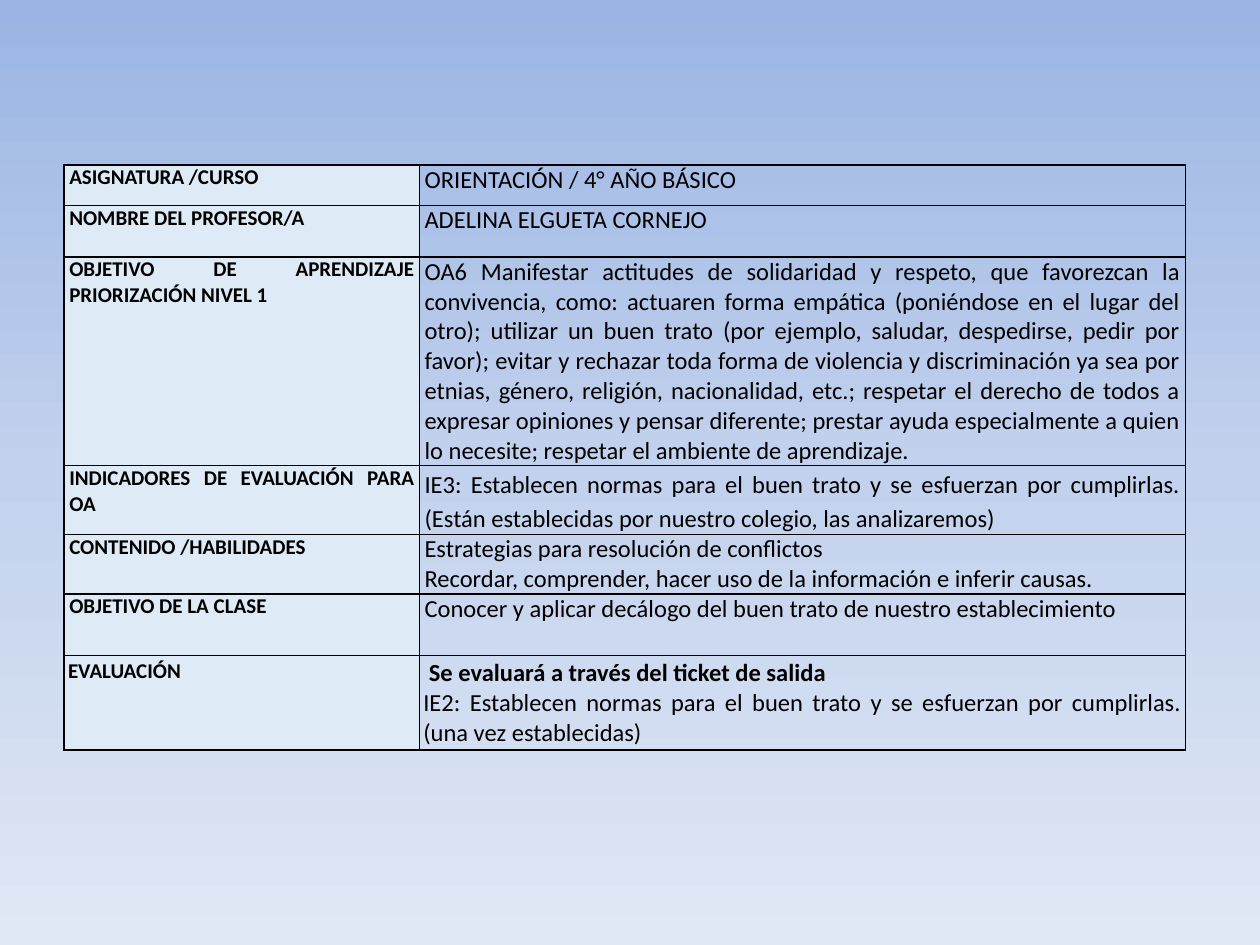
"""Build a lesson plan slide: one table of subject, objectives and evaluation."""
from copy import deepcopy

from pptx import Presentation
from pptx.dml.color import RGBColor
from pptx.enum.text import PP_ALIGN
from pptx.oxml import parse_xml
from pptx.oxml.ns import nsdecls, qn
from pptx.util import Inches, Pt

JUSTIFY = PP_ALIGN.JUSTIFY
BLANK_LAYOUT = 6
LABEL_FILL = "DEEAF6"
BACKGROUND = [(0, "9AB5E4"), (0.5, "C2D1ED"), (1, "E1E8F5")]
COLUMN_WIDTHS = [2.82, 6.08]
ROWS = [
    (0.32, "ASIGNATURA /CURSO", ["ORIENTACIÓN / 4° AÑO BÁSICO"]),
    (0.41, "NOMBRE DEL PROFESOR/A", ["ADELINA ELGUETA CORNEJO"]),
    (0.69, "OBJETIVO DE APRENDIZAJE PRIORIZACIÓN NIVEL 1", [
        "OA6 Manifestar actitudes de solidaridad y respeto, que favorezcan la "
        "convivencia, como: actuaren forma empática (poniéndose en el lugar del "
        "otro); utilizar un buen trato (por ejemplo, saludar, despedirse, pedir por "
        "favor); evitar y rechazar toda forma de violencia y discriminación ya sea "
        "por etnias, género, religión, nacionalidad, etc.; respetar el derecho de "
        "todos a expresar opiniones y pensar diferente; prestar ayuda especialmente "
        "a quien lo necesite; respetar el ambiente de aprendizaje."]),
    (0.48, "INDICADORES DE EVALUACIÓN PARA OA", [
        "IE3: Establecen normas para el buen trato y se esfuerzan por cumplirlas. "
        "(Están establecidas por nuestro colegio, las analizaremos)"]),
    (0.32, "CONTENIDO /HABILIDADES", [
        "Estrategias para resolución de conflictos",
        "Recordar, comprender, hacer uso de la información e inferir causas."]),
    (0.49, "OBJETIVO DE LA CLASE", [
        "Conocer y aplicar decálogo del buen trato de nuestro establecimiento"]),
    (0.63, "EVALUACIÓN", [
        " Se evaluará a través del ticket de salida",
        "IE2: Establecen normas para el buen trato y se esfuerzan por cumplirlas. "
        "(una vez establecidas)"]),
]


def color(value):
    """Turn a hex string into a colour."""
    return RGBColor.from_string(value)


def write_cell(cell, lines, size, bold, side, edge):
    """Fill a cell with justified paragraphs, margins and black borders."""
    cell.margin_left = cell.margin_right = Inches(side)
    cell.margin_top = cell.margin_bottom = Inches(edge)
    frame = cell.text_frame
    for index, line in enumerate(lines):
        para = frame.paragraphs[0] if index == 0 else frame.add_paragraph()
        para.alignment = JUSTIFY
        span = para.add_run()
        span.text = line
        span.font.name = "Calibri"
        span.font.size = Pt(size)
        span.font.bold = bold
        span.font.color.rgb = color("000000")
    properties = cell._tc.get_or_add_tcPr()
    for position, name in enumerate(["lnL", "lnR", "lnT", "lnB"]):
        properties.insert(position, parse_xml(
            f'<a:{name} {nsdecls("a")} w="{Pt(1)}"><a:solidFill>'
            f'<a:srgbClr val="000000"/></a:solidFill></a:{name}>'))


deck = Presentation()
deck.slide_width = Inches(10)
deck.slide_height = Inches(7.5)
page = deck.slides.add_slide(deck.slide_layouts[BLANK_LAYOUT])

backdrop = page.background.fill
backdrop.gradient()
backdrop.gradient_angle = 270
stop_list = page._element.find(".//" + qn("a:gsLst"))
stop_list.append(deepcopy(stop_list[-1]))
for stop, (place, shade) in zip(backdrop.gradient_stops, BACKGROUND):
    stop.position = place
    stop.color.rgb = color(shade)

table = page.shapes.add_table(
    len(ROWS), len(COLUMN_WIDTHS),
    Inches(0.51), Inches(1.31), Inches(8.9), Inches(3.34)).table
table.first_row = False
table.horz_banding = False
for column, width in zip(table.columns, COLUMN_WIDTHS):
    column.width = Inches(width)

for number, (height, label, lines) in enumerate(ROWS):
    table.rows[number].height = Inches(height)
    is_evaluation = label == "EVALUACIÓN"
    side, edge = (0.03, 0.02) if is_evaluation else (0.04, 0)
    label_cell, text_cell = table.cell(number, 0), table.cell(number, 1)
    label_cell.fill.solid()
    label_cell.fill.fore_color.rgb = color(LABEL_FILL)
    text_cell.fill.background()
    write_cell(label_cell, [label], 12, True, side, edge)
    write_cell(text_cell, lines, 14, False, side, edge)
    first = text_cell.text_frame.paragraphs[0]
    if is_evaluation:
        first.runs[0].font.bold = True
    if label.startswith("INDICADORES"):
        first.line_spacing = 1.15

deck.save("out.pptx")
